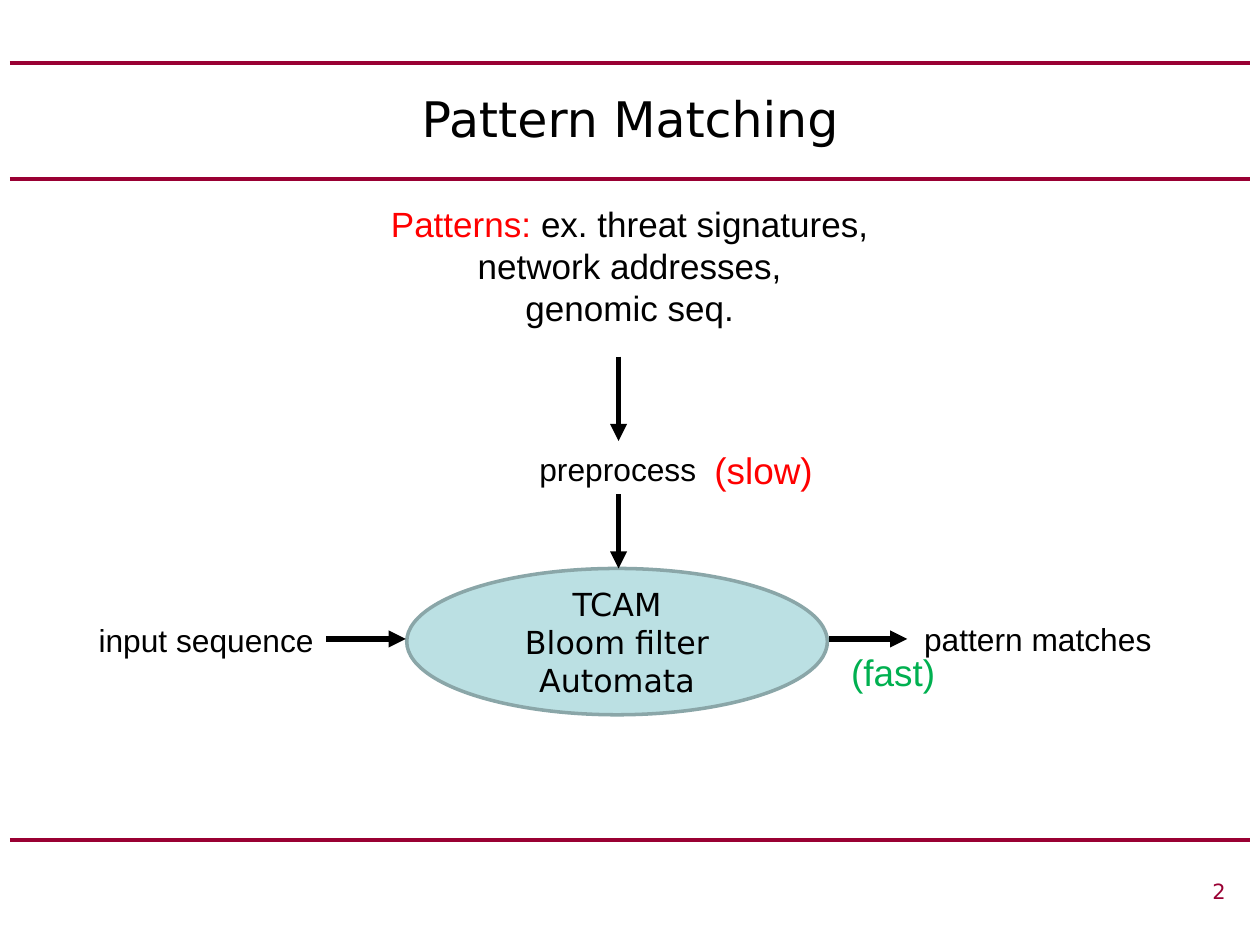
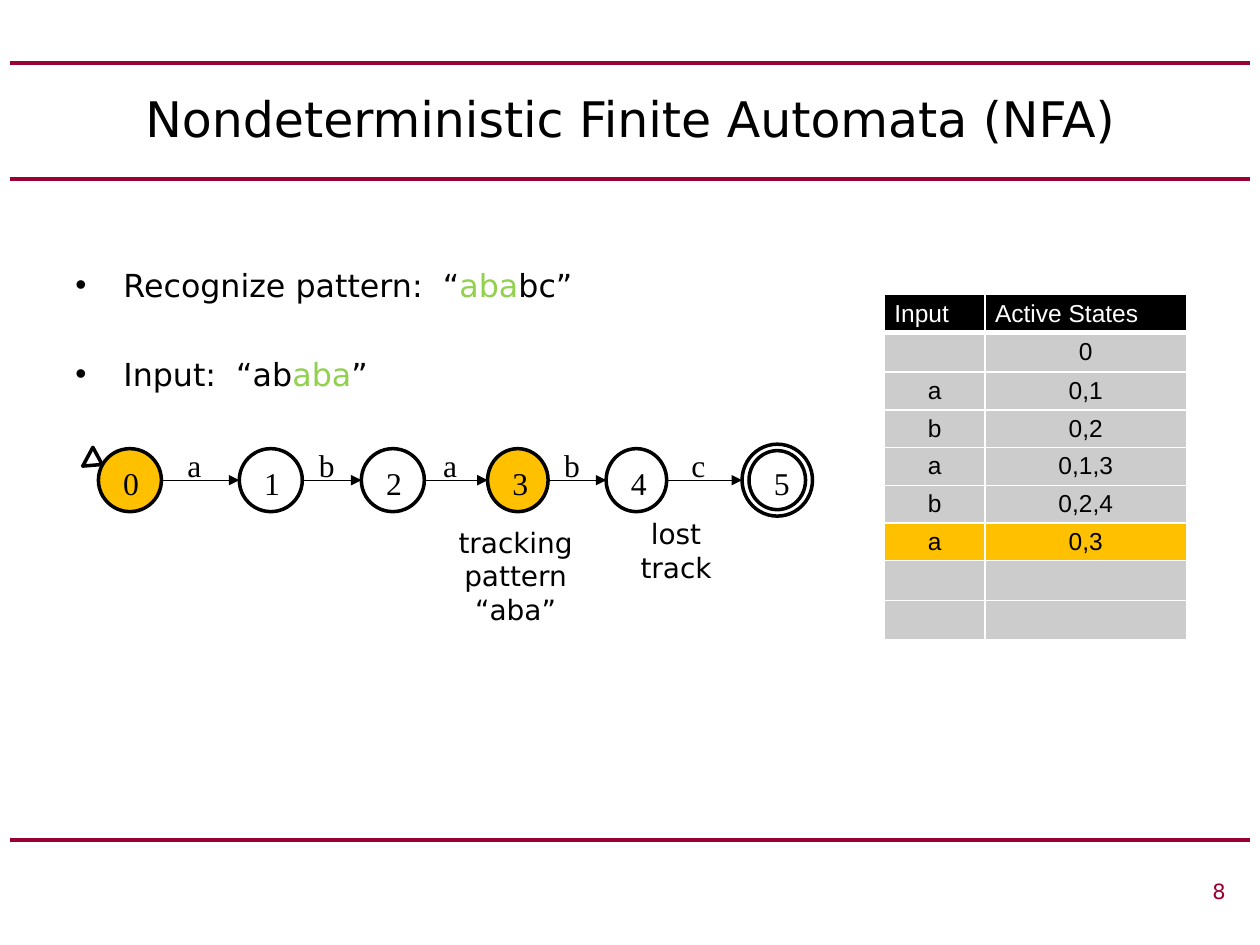
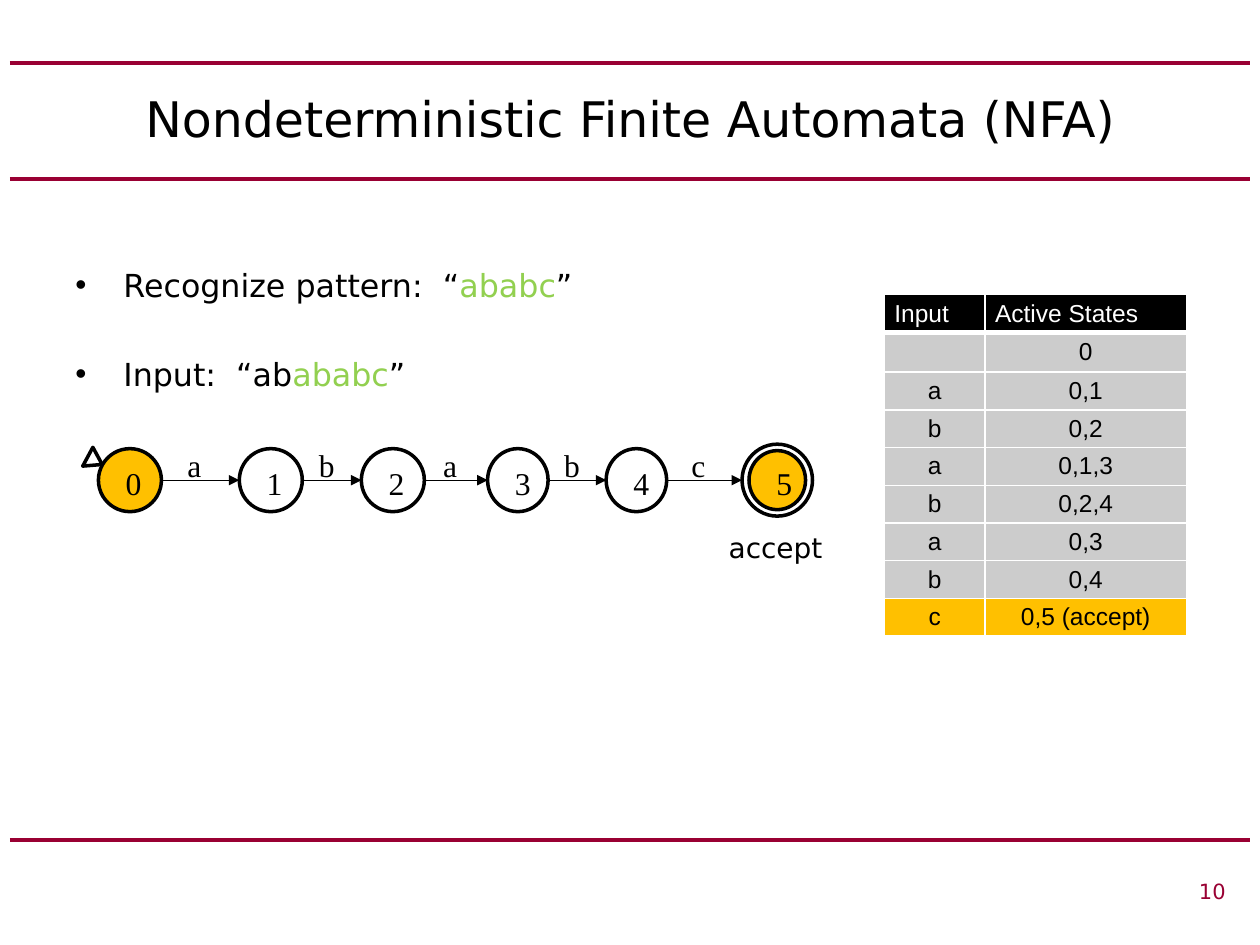
"""Build three slides on pattern matching and nondeterministic finite automata."""
from dataclasses import dataclass
from itertools import pairwise
from typing import Any, NamedTuple

from lxml import etree
from pptx import Presentation
from pptx import slide as sl
from pptx import util as u
from pptx.dml import color
from pptx.enum import shapes, text
from pptx.oxml import ns

LEFT, CENTER, RIGHT = text.PP_ALIGN.LEFT, text.PP_ALIGN.CENTER, text.PP_ALIGN.RIGHT
TOP, MIDDLE, BOTTOM = text.MSO_ANCHOR.TOP, text.MSO_ANCHOR.MIDDLE, text.MSO_ANCHOR.BOTTOM


@dataclass(frozen=True)
class Theme:
    """Colours, fonts and type sizes shared by the slides."""
    ink: str = "000000"
    paper: str = "FFFFFF"
    maroon: str = "990033"
    red: str = "FF0000"
    green: str = "00B050"
    lime: str = "92D050"
    active: str = "FFC000"
    cell: str = "CCCCCC"
    engine: str = "BBE0E3"
    engine_edge: str = "8AA6A8"
    display: str = "DejaVu Sans"
    sans: str = "Arial"
    serif: str = "Times New Roman"
    title: float = 28
    speed: float = 21.1
    patterns: float = 20
    body: float = 18.1
    edge: float = 18
    remark: float = 16
    table: float = 14
    page: float = 12


THEME = Theme()


class Box(NamedTuple):
    """Left, top, width and height in centimetres."""
    left: float
    top: float
    width: float
    height: float

    def lengths(self) -> list[u.Cm]:
        """Return the four values as lengths."""
        return [u.Cm(value) for value in self]


class Span(NamedTuple):
    """A stretch of text in one colour."""
    words: str
    ink: str = THEME.ink


class Style(NamedTuple):
    """Font, size, alignment and anchor of a text."""
    font: str
    size: float
    align: Any = CENTER
    anchor: Any = TOP


class State(NamedTuple):
    """One automaton state on the common axis."""
    name: str
    center: float
    width: float
    height: float = 1.27

    def box(self) -> Box:
        """Return the frame of the outer circle."""
        return Box(self.center - self.width / 2, AXIS - self.height / 2, self.width, self.height)


@dataclass(frozen=True)
class Remark:
    """A comment below the automaton."""
    words: str
    box: Box


@dataclass(frozen=True)
class Step:
    """One stage of the automaton with its trace."""
    page: str
    pattern: list[Span]
    consumed: list[Span]
    active: str
    trace: list[tuple[str, str]]
    current: int
    digit_shift: float
    remarks: list[Remark]


AXIS = 9.68
STATES = [State("0", 2.62, 1.27), State("1", 5.46, 1.27), State("2", 7.92, 1.27),
          State("3", 10.44, 1.22), State("4", 12.83, 1.22), State("5", 15.67, 1.42, 1.45)]
ACCEPTING = State("5", 15.67, 1.14, 1.19)
SYMBOLS = "ababc"
TRACE = [("", "0"), ("a", "0,1"), ("b", "0,2"), ("a", "0,1,3"), ("b", "0,2,4"), ("a", "0,3")]
PLAIN = Style(THEME.sans, THEME.body)
STEPS = [
    Step("8", [Span("aba", THEME.lime), Span("bc”")], [Span("aba", THEME.lime), Span("”")],
         "03", TRACE + [("", "")] * 2, 6, 0.25,
         [Remark("tracking pattern “aba”", Box(8.86, 10.46, 3.07, 2.31)),
          Remark("lost track", Box(12.32, 10.29, 2.62, 1.63))]),
    Step("10", [Span("ababc", THEME.lime), Span("”")], [Span("ababc", THEME.lime), Span("”")],
         "05", TRACE + [("b", "0,4"), ("c", "0,5 (accept)")], 8, 0.3,
         [Remark("accept", Box(14.1, 10.57, 3.07, 0.94))]),
]


def rgb(value: str) -> color.RGBColor:
    """Turn a hex value into a colour."""
    return color.RGBColor.from_string(value)


def apply(target: Any, values: dict[str, Any]) -> None:
    """Set each attribute of the target from a dict."""
    for name, value in values.items():
        setattr(target, name, value)


def write_spans(paragraph: Any, spans: list[Span], style: Style) -> None:
    """Fill a paragraph with coloured runs."""
    paragraph.alignment = style.align
    for span in spans:
        run = paragraph.add_run()
        run.text = span.words
        apply(run.font, {"name": style.font, "size": u.Pt(style.size), "bold": False})
        run.font.color.rgb = rgb(span.ink)


def write_lines(frame: Any, lines: list[list[Span]], style: Style) -> None:
    """Fill a text frame, one paragraph for each line."""
    apply(frame, {"word_wrap": True, "auto_size": text.MSO_AUTO_SIZE.NONE,
                  "vertical_anchor": style.anchor})
    for index, spans in enumerate(lines):
        paragraph = frame.add_paragraph() if index else frame.paragraphs[0]
        write_spans(paragraph, spans, style)


def add_text(slide: sl.Slide, box: Box, lines: list[list[Span]], style: Style) -> Any:
    """Add a text box and return its text frame."""
    frame = slide.shapes.add_textbox(*box.lengths()).text_frame
    write_lines(frame, lines, style)
    return frame


def add_outline(slide: sl.Slide, kind: Any, box: Box, fill: str | None = None,
                edge: str = THEME.ink) -> Any:
    """Add an outlined shape, filled if a colour is given."""
    shape = slide.shapes.add_shape(kind, *box.lengths())
    shape.shadow.inherit = False
    if fill:
        shape.fill.solid()
        shape.fill.fore_color.rgb = rgb(fill)
    else:
        shape.fill.background()
    shape.line.color.rgb = rgb(edge)
    shape.line.width = u.Pt(2)
    return shape


def add_line(slide: sl.Slide, start: tuple[float, float], end: tuple[float, float],
             width: float, ink: str = THEME.ink, arrow: bool = True) -> Any:
    """Add a straight line, with an arrowhead at its end unless told otherwise."""
    points = [u.Cm(value) for value in (*start, *end)]
    connector = slide.shapes.add_connector(shapes.MSO_CONNECTOR.STRAIGHT, *points)
    connector.line.color.rgb = rgb(ink)
    connector.line.width = u.Pt(width)
    properties = connector.element.spPr
    if arrow:
        etree.SubElement(properties.find(ns.qn("a:ln")), ns.qn("a:tailEnd"), type="triangle")
    etree.SubElement(properties, ns.qn("a:effectLst"))
    return connector


def add_rules(slide: sl.Slide) -> None:
    """Place the maroon rules on the layout of the slide."""
    layout = slide.slide_layout
    for placeholder in list(layout.placeholders)[1:]:
        layout.shapes.element.remove(placeholder.element)
    for index, top in enumerate((1.27, 3.61, 16.94)):
        rule = add_line(slide, (0.2, top), (25.2, top), 2.25, THEME.maroon, arrow=False)
        rule.element.nvCxnSpPr.cNvPr.id = 20 + index
        layout.shapes.element.append(rule.element)


def start_slide(deck: Any, heading: str, page: str) -> sl.Slide:
    """Add a slide with its title and page number."""
    slide = deck.slides.add_slide(deck.slide_layouts[5])
    if len(deck.slides) == 1:
        add_rules(slide)
    title = slide.shapes.title
    apply(title, dict(zip(("left", "top", "width", "height"),
                          Box(1.27, 1.27, 22.86, 2.21).lengths())))
    write_lines(title.text_frame, [[Span(heading)]],
                Style(THEME.display, THEME.title, anchor=MIDDLE))
    add_text(slide, Box(14.6, 17.58, 10.36, 0.84), [[Span(page, THEME.maroon)]],
             Style(THEME.display, THEME.page, RIGHT))
    return slide


def add_bullets(slide: sl.Slide, points: list[list[Span]]) -> None:
    """Add the bulleted points."""
    frame = add_text(slide, Box(1.27, 5.23, 22.86, 9.7), points,
                     Style(THEME.display, THEME.body, LEFT))
    for index, paragraph in enumerate(frame.paragraphs):
        properties = paragraph._p.get_or_add_pPr()
        properties.set("marL", str(u.Cm(0.97)))
        properties.set("indent", str(-u.Cm(0.97)))
        etree.SubElement(properties, ns.qn("a:buFont"), typeface=THEME.sans)
        etree.SubElement(properties, ns.qn("a:buChar"), char="•")
        if index:
            paragraph.space_before = u.Pt(29.2)


def add_automaton(slide: sl.Slide, step: Step) -> None:
    """Draw the states, transitions and start mark."""
    oval = shapes.MSO_SHAPE.OVAL
    for state in STATES:
        inner = ACCEPTING if state.name == ACCEPTING.name else state
        fill = THEME.active if state.name in step.active else None
        add_outline(slide, oval, inner.box(), fill)
        if inner is not state:
            add_outline(slide, oval, state.box())
        add_text(slide, Box(inner.box().left + step.digit_shift, 9.22, 0.61, 1.02),
                 [[Span(state.name)]], Style(THEME.serif, THEME.body, LEFT))
    for (source, target), symbol in zip(pairwise(STATES), SYMBOLS):
        start, end = source.center + source.width / 2, target.center - target.width / 2
        add_line(slide, (start, AXIS), (end, AXIS), 0.75)
        add_text(slide, Box((start + end) / 2 - 0.51, 8.86, 0.58, 1.02), [[Span(symbol)]],
                 Style(THEME.serif, THEME.edge, LEFT))
    start_mark = add_outline(slide, shapes.MSO_SHAPE.ISOSCELES_TRIANGLE,
                             Box(1.7, 9.12, 0.43, 0.33))
    start_mark.rotation = 118.3


def format_cell(cell: Any, words: str, fill: str, ink: str, style: Style, bottom: float) -> None:
    """Write, border and fill one table cell."""
    apply(cell, {"margin_left": u.Cm(0.2), "margin_right": u.Cm(0.2), "margin_top": u.Cm(0.1),
                 "margin_bottom": u.Cm(0.1), "vertical_anchor": style.anchor})
    paragraph = cell.text_frame.paragraphs[0]
    if words:
        write_spans(paragraph, [Span(words, ink)], style)
    else:
        etree.SubElement(paragraph._p, ns.qn("a:endParaRPr"), sz=str(int(style.size * 100)))
    properties = cell._tc.get_or_add_tcPr()
    for side, width in {"L": 1, "R": 1, "T": 1, "B": bottom}.items():
        border = etree.SubElement(properties, ns.qn(f"a:ln{side}"), w=str(u.Pt(width)))
        solid = etree.SubElement(border, ns.qn("a:solidFill"))
        etree.SubElement(solid, ns.qn("a:srgbClr"), val=THEME.paper)
    cell.fill.solid()
    cell.fill.fore_color.rgb = rgb(fill)


def add_trace(slide: sl.Slide, step: Step) -> None:
    """Add the table of active states."""
    rows = [("Input", "Active States"), *step.trace]
    box = Box(17.83, 5.94, 6.09, 0.76 * len(rows))
    table = slide.shapes.add_table(len(rows), 2, *box.lengths()).table
    apply(table, {"first_row": False, "horz_banding": False})
    for column, width in zip(table.columns, (2.03, 4.06)):
        column.width = u.Cm(width)
    heading = Style(THEME.sans, THEME.table, LEFT, BOTTOM)
    entry = Style(THEME.sans, THEME.table, CENTER, MIDDLE)
    for row, values in enumerate(rows):
        fill = THEME.active if row == step.current else THEME.cell
        for column, words in enumerate(values):
            cell = table.cell(row, column)
            if row == 0:
                format_cell(cell, words, THEME.ink, THEME.paper, heading, 3)
            else:
                format_cell(cell, words, fill, THEME.ink, entry, 1)


def build_overview(deck: Any) -> None:
    """Build the pattern matching flow."""
    slide = start_slide(deck, "Pattern Matching", "2")
    engine = add_outline(slide, shapes.MSO_SHAPE.OVAL, Box(8.2, 11.46, 8.48, 2.95),
                         THEME.engine, THEME.engine_edge)
    write_lines(engine.text_frame, [[Span("TCAM")], [Span("Bloom filter")], [Span("Automata")]],
                Style(THEME.display, THEME.body, anchor=MIDDLE))
    add_text(slide, Box(6.88, 3.96, 11.63, 2.82),
             [[Span("Patterns: ", THEME.red), Span("ex. threat signatures,")],
              [Span("network addresses,")], [Span("genomic seq.")]],
             Style(THEME.sans, THEME.patterns))
    for start, end in [((12.47, 7.19), (12.47, 8.89)), ((12.47, 9.96), (12.47, 11.46)),
                       ((6.58, 12.88), (8.18, 12.88)), ((16.71, 12.88), (18.29, 12.88))]:
        add_line(slide, start, end, 3.25)
    for words, box in [("input sequence", Box(1.73, 12.4, 4.85, 1.02)),
                       ("preprocess", Box(10.46, 8.94, 3.99, 1.02)),
                       ("pattern matches", Box(18.29, 12.37, 5.26, 1.02))]:
        add_text(slide, box, [[Span(words)]], PLAIN)
    for speed, left, top in [(Span("(slow)", THEME.red), 13.72, 8.89),
                             (Span("(fast)", THEME.green), 16.33, 12.98)]:
        add_text(slide, Box(left, top, 3.35, 1.17), [[speed]], Style(THEME.sans, THEME.speed))


def build_step(deck: Any, step: Step) -> None:
    """Build one stage of the automaton."""
    slide = start_slide(deck, "Nondeterministic Finite Automata (NFA)", step.page)
    add_bullets(slide, [[Span("Recognize pattern:  “"), *step.pattern],
                        [Span("Input:  “ab"), *step.consumed]])
    add_trace(slide, step)
    add_automaton(slide, step)
    for remark in step.remarks:
        add_text(slide, remark.box, [[Span(remark.words)]], Style(THEME.display, THEME.remark))


def main() -> None:
    """Build and save the deck."""
    deck = Presentation()
    apply(deck, {"slide_width": u.Cm(25.4), "slide_height": u.Cm(19.05)})
    build_overview(deck)
    for step in STEPS:
        build_step(deck, step)
    deck.save("out.pptx")


if __name__ == "__main__":
    main()
